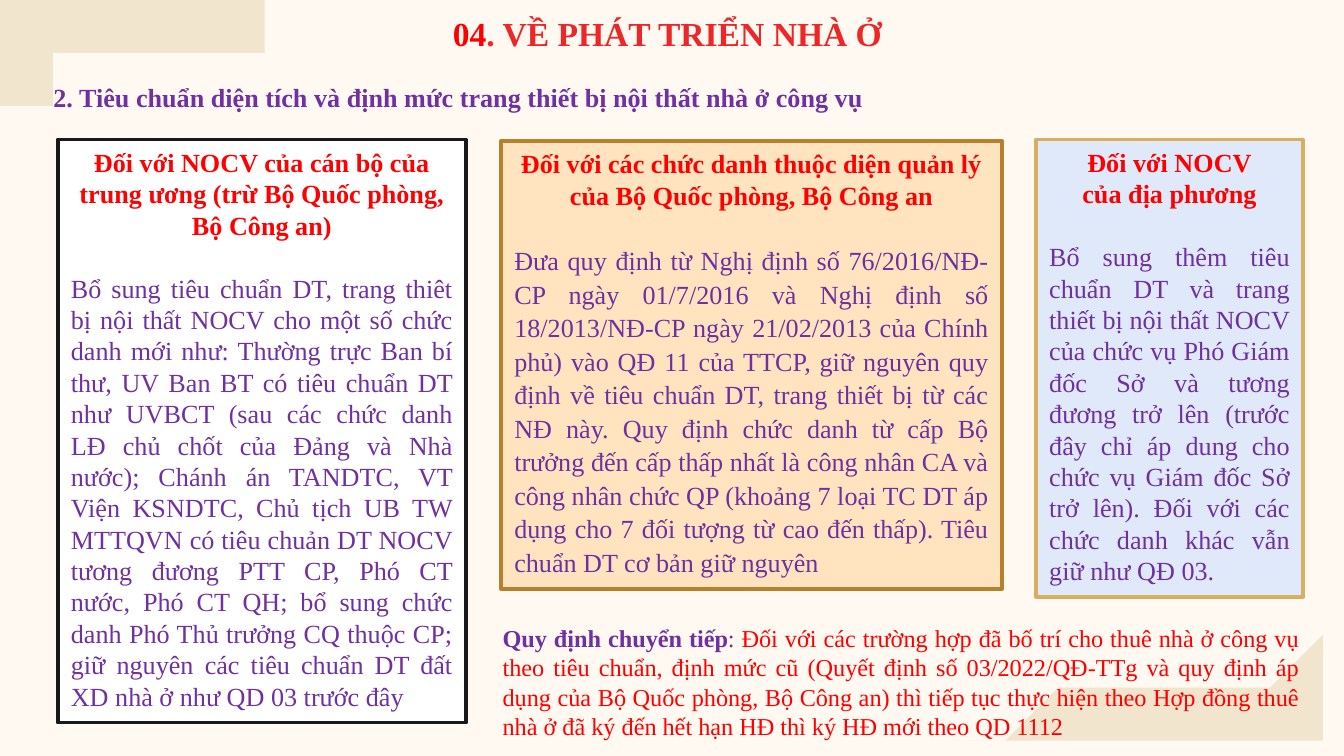
from dataclasses import dataclass

from pptx import Presentation
from pptx.dml.color import RGBColor
from pptx.enum.shapes import MSO_SHAPE
from pptx.enum.text import MSO_ANCHOR, PP_ALIGN
from pptx.util import Cm, Pt

RECT = MSO_SHAPE.RECTANGLE
TOP, BOTTOM = MSO_ANCHOR.TOP, MSO_ANCHOR.BOTTOM
CENTER, JUSTIFY = PP_ALIGN.CENTER, PP_ALIGN.JUSTIFY

FONT = "Times New Roman"
CREAM = RGBColor(0xFF, 0xF9, 0xF1)
SAND = RGBColor(0xF2, 0xE5, 0xCE)
RED = RGBColor(0xFF, 0x00, 0x00)
TITLE_RED = RGBColor(0xED, 0x27, 0x27)
PURPLE = RGBColor(0x70, 0x30, 0xA0)
WHITE = RGBColor(0xFF, 0xFF, 0xFF)
BLACK = RGBColor(0x19, 0x19, 0x19)
PEACH = RGBColor(0xFF, 0xE4, 0xBF)
BROWN = RGBColor(0xB7, 0x80, 0x2A)
PALE_BLUE = RGBColor(0xDF, 0xE9, 0xFA)
GOLD = RGBColor(0xD9, 0xAE, 0x60)

Point = tuple[float, float]
Box = tuple[float, float, float, float]  # left, top, width, height in cm


@dataclass
class Run:
    text: str
    color: RGBColor
    size: int = 14
    bold: bool = True


@dataclass
class Card:
    box: Box
    fill: RGBColor
    line: RGBColor
    heading: list[str]
    body: str
    spacing: float = 1.0


CARDS = [
    Card((1.09, 2.64, 7.72, 11.02), WHITE, BLACK,
         ["Đối với NOCV của cán bộ của trung ương (trừ Bộ Quốc phòng, Bộ Công an)"],
         "Bổ sung tiêu chuẩn DT, trang thiêt bị nội thất NOCV cho một số chức danh "
         "mới như: Thường trực Ban bí thư, UV Ban BT có tiêu chuẩn DT như UVBCT "
         "(sau các chức danh LĐ chủ chốt của Đảng và Nhà nước); Chánh án TANDTC, "
         "VT Viện KSNDTC, Chủ tịch UB TW MTTQVN có tiêu chuản DT NOCV tương đương "
         "PTT CP, Phó CT nước, Phó CT QH; bổ sung chức danh Phó Thủ trưởng CQ thuộc "
         "CP; giữ nguyên các tiêu chuẩn DT đất XD nhà ở như QD 03 trước đây"),
    Card((9.47, 2.67, 9.47, 8.46), PEACH, BROWN,
         ["Đối với các chức danh thuộc diện quản lý của Bộ Quốc phòng, Bộ Công an"],
         "Đưa quy định từ Nghị định số 76/2016/NĐ-CP ngày 01/7/2016 và Nghị định số "
         "18/2013/NĐ-CP ngày 21/02/2013 của Chính phủ) vào QĐ 11 của TTCP, giữ "
         "nguyên quy định về tiêu chuẩn DT, trang thiết bị từ các NĐ này. Quy định "
         "chức danh từ cấp Bộ trưởng đến cấp thấp nhất là công nhân CA và công nhân "
         "chức QP (khoảng 7 loại TC DT áp dụng cho 7 đối tượng từ cao đến thấp). "
         "Tiêu chuẩn DT cơ bản giữ nguyên", 1.07),
    Card((19.58, 2.64, 5.05, 8.64), PALE_BLUE, GOLD,
         ["Đối với NOCV", "của địa phương"],
         "Bổ sung thêm tiêu chuẩn DT và trang thiết bị nội thất NOCV của chức vụ Phó "
         "Giám đốc Sở và tương đương trở lên (trước đây chỉ áp dung cho chức vụ Giám "
         "đốc Sở trở lên). Đối với các chức danh khác vẫn giữ như QĐ 03."),
]


def curve(p0: Point, p1: Point, p2: Point, p3: Point, steps: int = 24) -> list[Point]:
    """Points along a cubic Bézier curve, without its start."""
    points = []
    for i in range(1, steps + 1):
        t = i / steps
        u = 1 - t
        points.append(tuple(u**3 * a + 3 * u * u * t * b + 3 * u * t * t * c + t**3 * d
                            for a, b, c, d in zip(p0, p1, p2, p3)))
    return points


def add_blob(s, points: list[Point]) -> None:
    builder = s.shapes.build_freeform(*points[0], scale=Cm(1))
    builder.add_line_segments(points[1:], close=True)
    sp = builder.convert_to_shape()
    sp.shadow.inherit = False
    sp.fill.solid()
    sp.fill.fore_color.rgb = SAND
    sp.line.fill.background()


def write(p, runs: list[Run], align: PP_ALIGN) -> None:
    p.alignment = align
    for item in runs:
        r = p.add_run()
        r.text = item.text
        r.font.name = FONT
        r.font.size = Pt(item.size)
        r.font.bold = item.bold
        r.font.color.rgb = item.color


def add_text(s, box: Box, runs: list[Run], align: PP_ALIGN = JUSTIFY):
    tf = s.shapes.add_textbox(*map(Cm, box)).text_frame
    tf.word_wrap = True
    write(tf.paragraphs[0], runs, align)
    return tf


def add_card(s, card: Card) -> None:
    sp = s.shapes.add_shape(RECT, *map(Cm, card.box))
    sp.shadow.inherit = False
    sp.fill.solid()
    sp.fill.fore_color.rgb = card.fill
    sp.line.color.rgb = card.line
    sp.line.width = Pt(2)
    tf = sp.text_frame
    tf.word_wrap = True
    tf.vertical_anchor = TOP
    p = tf.paragraphs[0]
    for heading in card.heading:
        write(p, [Run(heading, RED)], CENTER)
        p = tf.add_paragraph()
    write(p, [Run(card.body, PURPLE, bold=False)], JUSTIFY)
    p.space_before = Pt(17)
    p.line_spacing = card.spacing


def main() -> None:
    prs = Presentation()
    prs.slide_width, prs.slide_height = Cm(25.4), Cm(14.29)
    s = prs.slides.add_slide(prs.slide_layouts[6])

    # Background with two corner waves
    s.background.fill.solid()
    s.background.fill.fore_color.rgb = CREAM
    add_blob(s, [(0, 0), (0, 2.01),
                 *curve((0, 2.01), (0.99, 1.65), (2.26, 0.79), (3.68, 0.64)),
                 *curve((3.68, 0.64), (4.98, 0.46), (6.45, 0.38), (7.49, 0))])
    add_blob(s, [(25.4, 14.29), (25.4, 12.37),
                 *curve((25.4, 12.37), (25.2, 12.42), (25, 12.45), (24.79, 12.5)),
                 *curve((24.79, 12.5), (22.07, 12.9), (18.82, 13.23), (18.01, 14.29))])

    # Title and section heading
    tf = add_text(s, (-0.53, 0.03, 26.29, 1.22),
                  [Run("04", RED, 18), Run(". VỀ PHÁT TRIỂN NHÀ Ở", TITLE_RED, 18)], CENTER)
    tf.vertical_anchor = BOTTOM
    tf.margin_top = tf.margin_bottom = Cm(0.25)
    tf = add_text(s, (0.76, 1.42, 23.67, 0.86),
                  [Run("2. Tiêu chuẩn diện tích và định mức trang thiết bị nội thất "
                       "nhà ở công vụ", PURPLE)])
    tf.paragraphs[0].space_before = tf.paragraphs[0].space_after = Pt(4)

    # Three groups of officials
    for card in CARDS:
        add_card(s, card)

    # Transitional provision
    add_text(s, (9.25, 11.66, 15.54, 3.02), [
        Run("Quy định chuyển tiếp", PURPLE, 13),
        Run(": ", PURPLE, 13, False),
        Run("Đối với các trường hợp đã bố trí cho thuê nhà ở công vụ theo tiêu chuẩn, "
            "định mức cũ (Quyết định số 03/2022/QĐ-TTg và quy định áp dụng của Bộ Quốc "
            "phòng, Bộ Công an) thì tiếp tục thực hiện theo Hợp đồng thuê nhà ở đã ký "
            "đến hết hạn HĐ thì ký HĐ mới theo QD 1112", RED, 13, False),
    ])

    prs.save("out.pptx")


if __name__ == "__main__":
    main()
